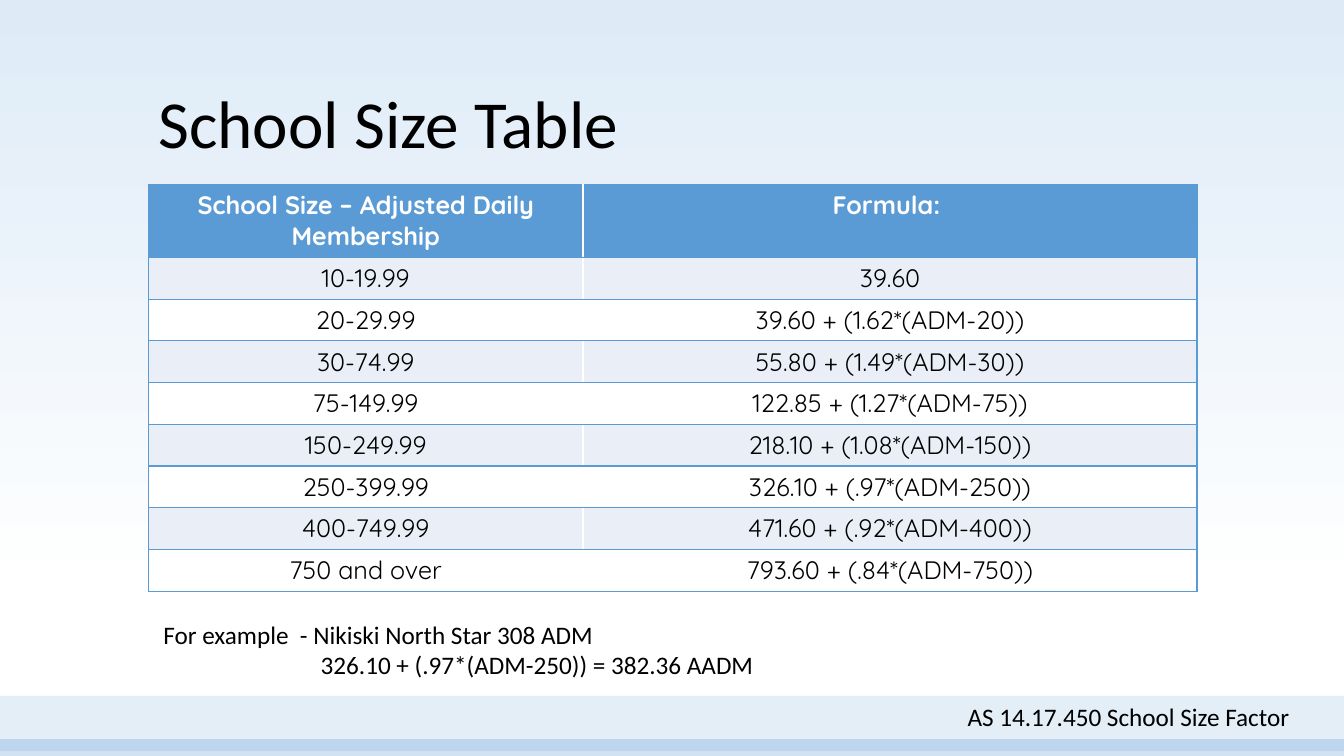
import pptx
import pptx.util
import pptx.dml.color
import pptx.enum.shapes
import pptx.enum.text
import pptx.oxml
import pptx.oxml.ns

Pt = pptx.util.Pt
RGBColor = pptx.dml.color.RGBColor
PP_ALIGN = pptx.enum.text.PP_ALIGN
ANCHOR = pptx.enum.text.MSO_ANCHOR
qn = pptx.oxml.ns.qn

BLUE = RGBColor(0x5B, 0x9B, 0xD5)
SKY = RGBColor(0xDE, 0xEB, 0xF7)
BAND = RGBColor(0xEA, 0xEF, 0xF7)
WHITE = RGBColor(0xFF, 0xFF, 0xFF)
BLACK = RGBColor(0x00, 0x00, 0x00)

SLIDE_W, SLIDE_H = 960, 540
LEFT, WIDTH = 106, 749
COLUMN_WIDTHS = (310.5, 438.5)
HEADER_H, ROW_H = 52.4, 29.8

ROWS = [
    ("School Size – Adjusted Daily Membership", "Formula: "),
    ("10-19.99", "39.60"),
    ("20-29.99", "39.60 + (1.62*(ADM-20))"),
    ("30-74.99", "55.80 + (1.49*(ADM-30))"),
    ("75-149.99", "122.85 + (1.27*(ADM-75))"),
    ("150-249.99", "218.10 + (1.08*(ADM-150))"),
    ("250-399.99", "326.10 + (.97*(ADM-250))"),
    ("400-749.99", "471.60 + (.92*(ADM-400))"),
    ("750 and over", "793.60 + (.84*(ADM-750))"),
]


def write(p, text, size=18, font="Calibri", color=BLACK, bold=False,
          align=PP_ALIGN.LEFT, indent=0, spacing=1.0):
    p.alignment = align
    p.line_spacing = spacing
    if indent:
        p._p.get_or_add_pPr().set("marL", str(Pt(indent)))
    r = p.add_run()
    r.text = text
    r.font.size = Pt(size)
    r.font.name = font
    r.font.bold = bold
    r.font.color.rgb = color


def place(sp, left, top, width, height):
    sp.left, sp.top, sp.width, sp.height = map(Pt, (left, top, width, height))


def paint_background(s):
    fill = s.background.fill
    fill.gradient()
    fill.gradient_angle = 270
    for stop, color, position in zip(fill.gradient_stops, (SKY, WHITE), (0, 0.79)):
        stop.color.rgb = color
        stop.position = position


def add_band(s, top, height, opacity):
    """Draw a translucent strip across the whole slide."""
    sp = s.shapes.add_shape(pptx.enum.shapes.MSO_SHAPE.RECTANGLE,
                            Pt(0), Pt(top), Pt(SLIDE_W), Pt(height))
    sp.shadow.inherit = False
    sp.line.fill.background()
    sp.fill.solid()
    sp.fill.fore_color.rgb = BLUE
    color = sp._element.spPr.find(qn("a:solidFill")).find(qn("a:srgbClr"))
    alpha = pptx.oxml.parse_xml(
        f'<a:alpha {pptx.oxml.ns.nsdecls("a")} val="{opacity * 1000}"/>')
    color.append(alpha)


def set_title(s, text):
    sp = s.shapes.title
    place(sp, LEFT, 34.5, WIDTH, 85.5)
    sp.text_frame.word_wrap = True
    sp.text_frame.vertical_anchor = ANCHOR.BOTTOM
    write(sp.text_frame.paragraphs[0], text, size=48, spacing=0.9)


def set_borders(cell, sides):
    """Line the given sides, which must run in the order L, R, T, B."""
    for i, side in enumerate(sides):
        line = pptx.oxml.parse_xml(
            f'<a:ln{side} {pptx.oxml.ns.nsdecls("a")} w="{Pt(1)}"><a:solidFill>'
            f'<a:srgbClr val="{BLUE}"/></a:solidFill></a:ln{side}>')
        cell._tc.get_or_add_tcPr().insert(i, line)


def add_size_table(s):
    height = HEADER_H + ROW_H * (len(ROWS) - 1)
    table = s.shapes.add_table(len(ROWS), len(COLUMN_WIDTHS), Pt(LEFT), Pt(131.5),
                               Pt(WIDTH), Pt(height)).table
    for column, width in zip(table.columns, COLUMN_WIDTHS):
        column.width = Pt(width)
    for i, texts in enumerate(ROWS):
        header = i == 0
        table.rows[i].height = Pt(HEADER_H if header else ROW_H)
        for j, text in enumerate(texts):
            cell = table.cell(i, j)
            cell.fill.solid()
            cell.fill.fore_color.rgb = BLUE if header else BAND if i % 2 else WHITE
            set_borders(cell, "LTB" if j == 0 else "RTB")
            write(cell.text_frame.paragraphs[0], text, font="Quicksand", bold=header,
                  color=WHITE if header else BLACK, align=PP_ALIGN.CENTER)


def add_text(s, left, top, width, height, lines):
    """Add a text box with one paragraph per (text, indent) pair."""
    tf = s.shapes.add_textbox(Pt(left), Pt(top), Pt(width), Pt(height)).text_frame
    tf.word_wrap = True
    for i, (text, indent) in enumerate(lines):
        p = tf.add_paragraph() if i else tf.paragraphs[0]
        write(p, text, indent=indent)


def main():
    prs = pptx.Presentation()
    prs.slide_width, prs.slide_height = Pt(SLIDE_W), Pt(SLIDE_H)
    s = prs.slides.add_slide(prs.slide_layouts[5])
    paint_background(s)
    add_band(s, 497, 39.5, 17)
    add_band(s, 528, 12, 28)
    set_title(s, "School Size Table")
    add_size_table(s)
    add_text(s, LEFT, 438.5, WIDTH, 51,
             [("For example  - Nikiski North Star 308 ADM", 3.6),
              ("326.10 + (.97*(ADM-250)) = 382.36 AADM", 116)])
    add_text(s, 684, 497.5, 258.5, 29, [("AS 14.17.450 School Size Factor", 0)])
    prs.save("out.pptx")


if __name__ == "__main__":
    main()
